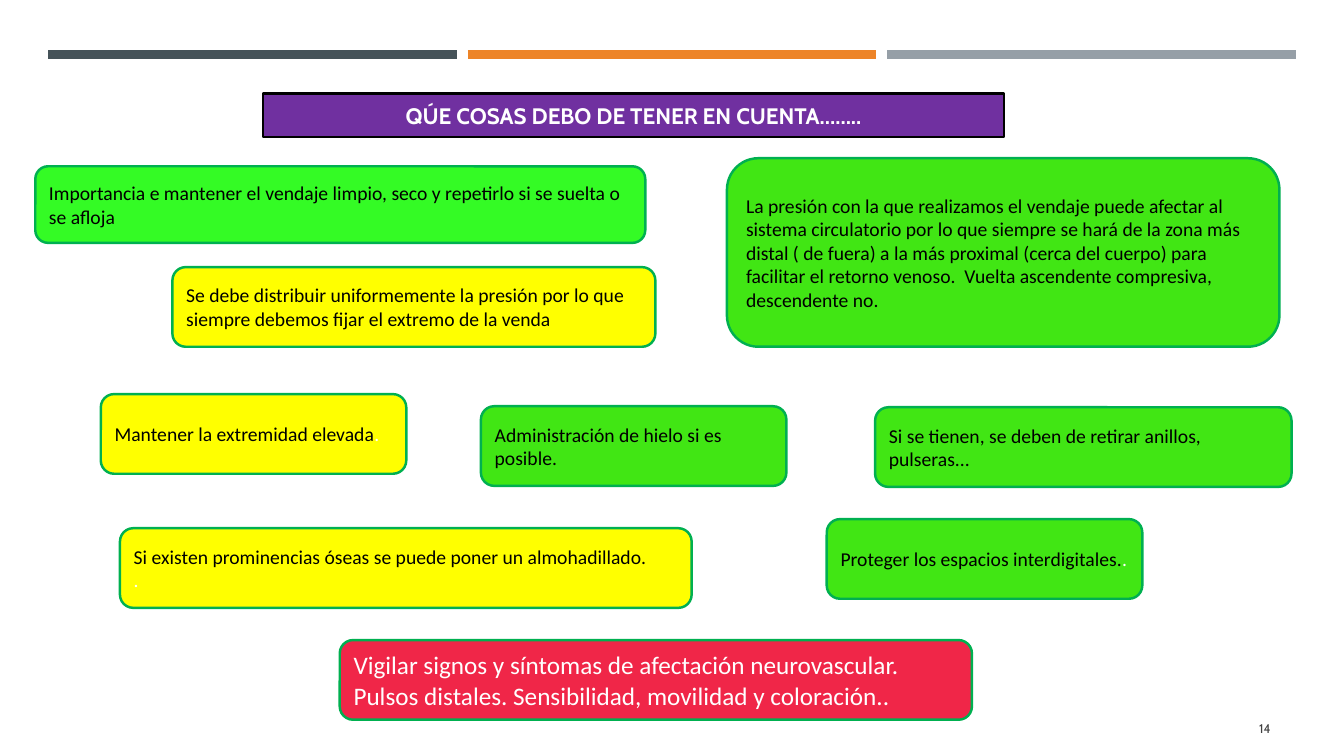
from lxml import etree
from pptx import Presentation
from pptx.dml.color import RGBColor
from pptx.enum.shapes import MSO_CONNECTOR, MSO_SHAPE
from pptx.enum.text import MSO_ANCHOR, PP_ALIGN
from pptx.oxml.ns import qn
from pptx.util import Inches, Pt

RECT, ROUNDED = MSO_SHAPE.RECTANGLE, MSO_SHAPE.ROUNDED_RECTANGLE
STRAIGHT = MSO_CONNECTOR.STRAIGHT
MIDDLE = MSO_ANCHOR.MIDDLE
LEFT, CENTER, RIGHT = PP_ALIGN.LEFT, PP_ALIGN.CENTER, PP_ALIGN.RIGHT

WHITE = RGBColor(0xFF, 0xFF, 0xFF)
BLACK = RGBColor(0x00, 0x00, 0x00)
SLATE = RGBColor(0x46, 0x53, 0x59)
ORANGE = RGBColor(0xED, 0x84, 0x28)
GRAY = RGBColor(0x96, 0x9F, 0xA7)
DARK_GRAY = RGBColor(0x40, 0x40, 0x40)
PURPLE = RGBColor(0x70, 0x30, 0xA0)
BORDER_GREEN = RGBColor(0x00, 0xB0, 0x50)
GREEN = RGBColor(0x41, 0xE6, 0x14)
BRIGHT_GREEN = RGBColor(0x34, 0xFB, 0x25)
YELLOW = RGBColor(0xFF, 0xFF, 0x00)
RED = RGBColor(0xF0, 0x26, 0x48)


def write_paragraph(paragraph, text, font_name, size, color, align=LEFT):
    paragraph.text = text
    paragraph.alignment = align
    paragraph.font.name = font_name
    paragraph.font.size = Pt(size)
    paragraph.font.color.rgb = color


def add_box(kind, place, fill, border):
    box = slide.shapes.add_shape(kind, *map(Inches, place))
    box.shadow.inherit = False
    box.fill.solid()
    box.fill.fore_color.rgb = fill
    box.line.color.rgb = border
    box.line.width = Pt(1.75)
    box.text_frame.word_wrap = True
    box.text_frame.vertical_anchor = MIDDLE
    return box


prs = Presentation()
prs.slide_width, prs.slide_height = Inches(13.33), Inches(7.5)
slide = prs.slides.add_slide(prs.slide_layouts[6])

# Header bars
for column, color in enumerate((SLATE, ORANGE, GRAY)):
    left = 0.48 + column * 4.16
    bar = slide.shapes.add_connector(
        STRAIGHT, Inches(left), Inches(0.54), Inches(left + 4.05), Inches(0.54))
    bar.line.color.rgb = color
    bar.line.width = Pt(6.5)
    etree.SubElement(bar.line._get_or_add_ln().getparent(), qn("a:effectLst"))

# Title
title = add_box(RECT, (2.61, 0.93, 7.35, 0.43), PURPLE, BLACK)
title_line = title.text_frame.paragraphs[0]
write_paragraph(title_line, "QÚE COSAS DEBO DE TENER EN CUENTA……..", "Cabin", 16, WHITE, CENTER)
title_line.font.bold = True

# Advice boxes: place, fill, text size, text colour, text
advice = [
    ((7.21, 1.57, 5.48, 1.87), GREEN, 14, BLACK,
     "La presión con la que realizamos el vendaje puede afectar al sistema circulatorio "
     "por lo que siempre se hará de la zona más distal ( de fuera) a la más proximal "
     "(cerca del cuerpo) para facilitar el retorno venoso.  Vuelta ascendente compresiva, "
     "descendente no."),
    ((1, 3.91, 3.03, 0.79), YELLOW, 14, BLACK, "Mantener la extremidad elevada"),
    ((1.71, 2.65, 4.79, 0.79), YELLOW, 14, BLACK,
     "Se debe distribuir uniformemente la presión por lo que siempre debemos fijar "
     "el extremo de la venda"),
    ((4.77, 4.03, 3.03, 0.79), GREEN, 14, BLACK, "Administración de hielo si es posible."),
    ((1.19, 5.24, 5.67, 0.79), YELLOW, 14, BLACK,
     "Si existen prominencias óseas se puede poner un almohadillado."),
    ((8.68, 4.04, 4.13, 0.79), GREEN, 14, BLACK,
     "Si se tienen, se deben de retirar anillos, pulseras..."),
    ((0.35, 1.65, 6.05, 0.76), BRIGHT_GREEN, 14, BLACK,
     "Importancia e mantener el vendaje limpio, seco y repetirlo si se suelta o se afloja"),
    ((8.2, 5.15, 3.13, 0.79), GREEN, 14, BLACK, "Proteger los espacios interdigitales."),
    ((3.37, 6.35, 6.27, 0.79), RED, 18, WHITE,
     "Vigilar signos y síntomas de afectación neurovascular. Pulsos distales. "
     "Sensibilidad, movilidad y coloración.."),
]
frames = []
for place, fill, size, color, text in advice:
    frame = add_box(ROUNDED, place, fill, BORDER_GREEN).text_frame
    write_paragraph(frame.paragraphs[0], text, "Calibri", size, color)
    frames.append(frame)

# White full stops that close three of the boxes
elevation, padding, fingers = frames[1], frames[4], frames[7]
for frame in (elevation, fingers):
    stop = frame.paragraphs[0].add_run()
    stop.text = "."
    stop.font.color.rgb = WHITE
write_paragraph(padding.add_paragraph(), ".", "Calibri", 14, WHITE)

# Slide number
number = slide.shapes.add_textbox(Inches(11.55), Inches(7.03), Inches(1.15), Inches(0.4))
number.text_frame.word_wrap = True
number.text_frame.vertical_anchor = MIDDLE
write_paragraph(number.text_frame.paragraphs[0], "14", "Cabin", 9, DARK_GRAY, RIGHT)

prs.save("out.pptx")
